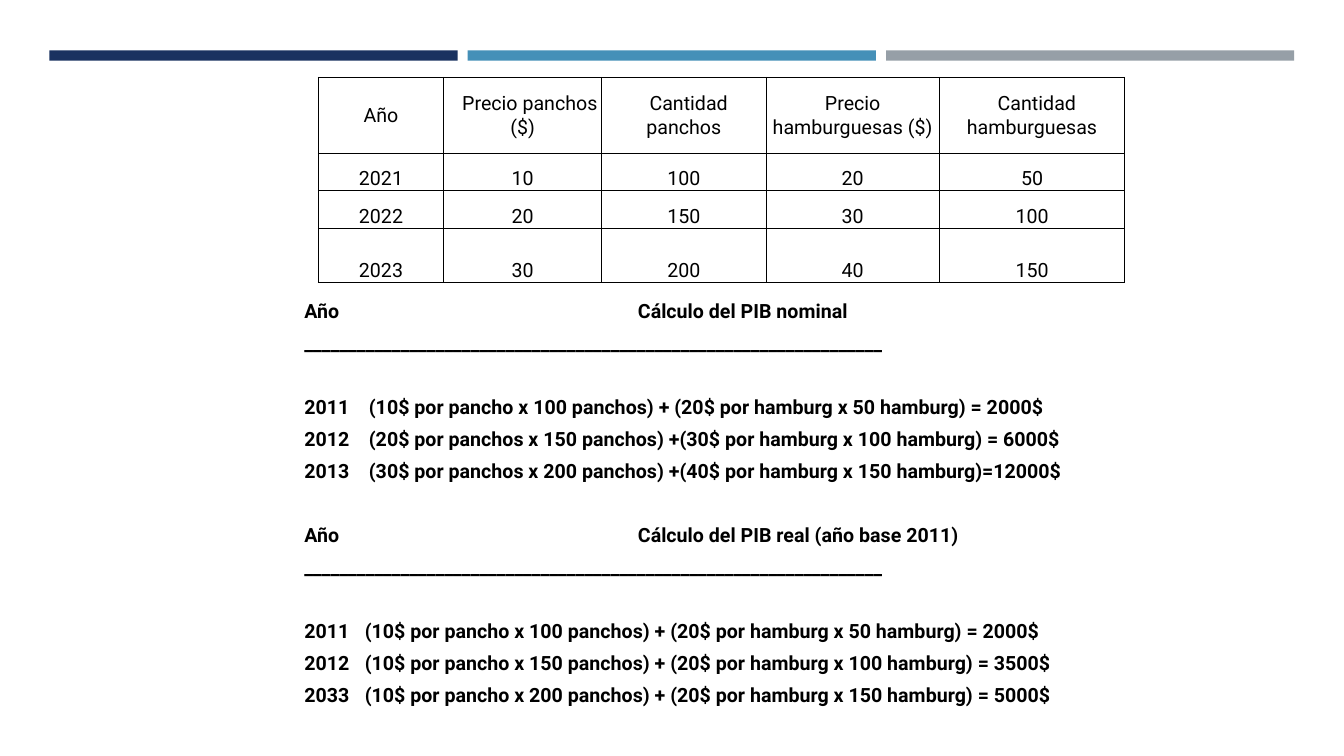
from dataclasses import dataclass

from lxml import etree
from pptx import Presentation
from pptx.dml.color import RGBColor
from pptx.enum import shapes, text
from pptx.oxml import ns
from pptx.util import Pt


@dataclass(frozen=True)
class Theme:
    navy: str = "1A3260"
    blue: str = "4590B8"
    grey: str = "969FA7"
    ink: str = "000000"
    face: str = "Roboto"
    size: float = 14
    thin: float = 0.5
    thick: float = 1


THEME = Theme()

COLS = [89.3, 113, 117.4, 123.8, 132.5]
ROWS = [54, 26.8, 26.8, 38.9]
DATA = [
    ["Año", "Precio panchos ($)", "Cantidad panchos",
     "Precio hamburguesas ($)", "Cantidad hamburguesas"],
    ["2021", "10", "100", "20", "50"],
    ["2022", "20", "150", "30", "100"],
    ["2023", "30", "200", "40", "150"],
]
SHIFTS = [0, 10.4, 6.9, 0, 6.9]  # first-line indents of the header cells

RULE = "_" * 66
NOMINAL = [
    ("2011", "(10$ por pancho x 100 panchos) + (20$ por hamburg x 50 hamburg) = 2000$"),
    ("2012", "(20$ por panchos x 150 panchos) +(30$ por hamburg x 100 hamburg) = 6000$"),
    ("2013", "(30$ por panchos x 200 panchos) +(40$ por hamburg x 150 hamburg)=12000$"),
]
REAL = [
    ("2011", "(10$ por pancho x 100 panchos) + (20$ por hamburg x 50 hamburg) = 2000$"),
    ("2012", "(10$ por pancho x 150 panchos) + (20$ por hamburg x 100 hamburg) = 3500$"),
    ("2033", "(10$ por pancho x 200 panchos) + (20$ por hamburg x 150 hamburg) = 5000$"),
]
# heading, rows, left edge of the formulas
BLOCKS = [
    ("Cálculo del PIB nominal", NOMINAL, 52.6),
    ("Cálculo del PIB real (año base 2011)", REAL, 49.7),
]
START, HEAD = 6.5, 244.8  # left edges of the years and of the headings
GAP, LINE = 6, 22.8       # space between lines, and one whole line


def apply(obj, **form):
    for key, value in form.items():
        setattr(obj, key, value)


def style(run, bold=False):
    apply(run.font, name=THEME.face, size=Pt(THEME.size), bold=bold)
    run.font.color.rgb = RGBColor.from_string(THEME.ink)


def indent(para, left, first):
    props = para._p.get_or_add_pPr()
    props.set("marL", str(Pt(left)))
    props.set("indent", str(Pt(first)))


def add_bars(slide, left, top, width, height, gap):
    for i, color in enumerate([THEME.navy, THEME.blue, THEME.grey]):
        bar = slide.shapes.add_shape(
            shapes.MSO_SHAPE.RECTANGLE, Pt(left + i * (width + gap)), Pt(top),
            Pt(width), Pt(height))
        bar.shadow.inherit = False
        bar.fill.solid()
        bar.fill.fore_color.rgb = RGBColor.from_string(color)
        bar.line.fill.background()


def frame(cell, edges):
    """Draw the cell's borders; edges maps a side (L, R, T, B) to a width."""
    props = cell._tc.get_or_add_tcPr()
    for side, width in edges.items():
        line = etree.SubElement(props, ns.qn(f"a:ln{side}"), w=str(Pt(width)))
        fill = etree.SubElement(line, ns.qn("a:solidFill"))
        etree.SubElement(fill, ns.qn("a:srgbClr"), val=THEME.ink)


def add_prices(slide, left, top):
    rows, cols = len(ROWS), len(COLS)
    table = slide.shapes.add_table(
        rows, cols, Pt(left), Pt(top), Pt(sum(COLS)), Pt(sum(ROWS))).table
    apply(table, first_row=False, horz_banding=False)
    for col, width in zip(table.columns, COLS):
        col.width = Pt(width)
    for row, height in zip(table.rows, ROWS):
        row.height = Pt(height)
    anchor = text.MSO_ANCHOR
    for r, values in enumerate(DATA):
        for c, value in enumerate(values):
            cell = table.cell(r, c)
            apply(cell, margin_left=Pt(0.7), margin_right=Pt(0.7),
                  margin_top=Pt(0.7), margin_bottom=0,
                  vertical_anchor=anchor.BOTTOM if r else anchor.MIDDLE)
            outer = {"L": c == 0, "R": c == cols - 1,
                     "T": r == 0, "B": r == rows - 1}
            frame(cell, {side: THEME.thick if out else THEME.thin
                         for side, out in outer.items()})
            cell.fill.background()
            para = cell.text_frame.paragraphs[0]
            para.alignment = text.PP_ALIGN.CENTER
            if r == 0:
                indent(para, 0, SHIFTS[c])
            run = para.add_run()
            run.text = value
            style(run)


def add_sums(slide, left, top, width, height):
    box = slide.shapes.add_textbox(Pt(left), Pt(top), Pt(width), Pt(height))
    body = box.text_frame
    body.word_wrap = True
    lines = []  # words, left edge after the tab, space before
    for title, rows, edge in BLOCKS:
        lines.append((f"Año\t{title}", HEAD, GAP + LINE if lines else GAP))
        lines.append((RULE, START, GAP))
        for i, (year, formula) in enumerate(rows):
            lines.append((f"{year}\t{formula}", edge, GAP if i else GAP + LINE))
    for i, (words, edge, space) in enumerate(lines):
        para = body.add_paragraph() if i else body.paragraphs[0]
        para.space_before = Pt(space)
        indent(para, edge, START - edge)
        run = para.add_run()
        run.text = words
        style(run, bold=True)


def main():
    deck = Presentation()
    apply(deck, slide_width=Pt(960), slide_height=Pt(540))
    slide = deck.slides.add_slide(deck.slide_layouts[6])
    add_bars(slide, 35.3, 36, 291.6, 7.4, 7.2)
    add_sums(slide, 203.8, 210.2, 635.8, 311)
    add_prices(slide, 227.5, 55.4)
    deck.save("out.pptx")


if __name__ == "__main__":
    main()
